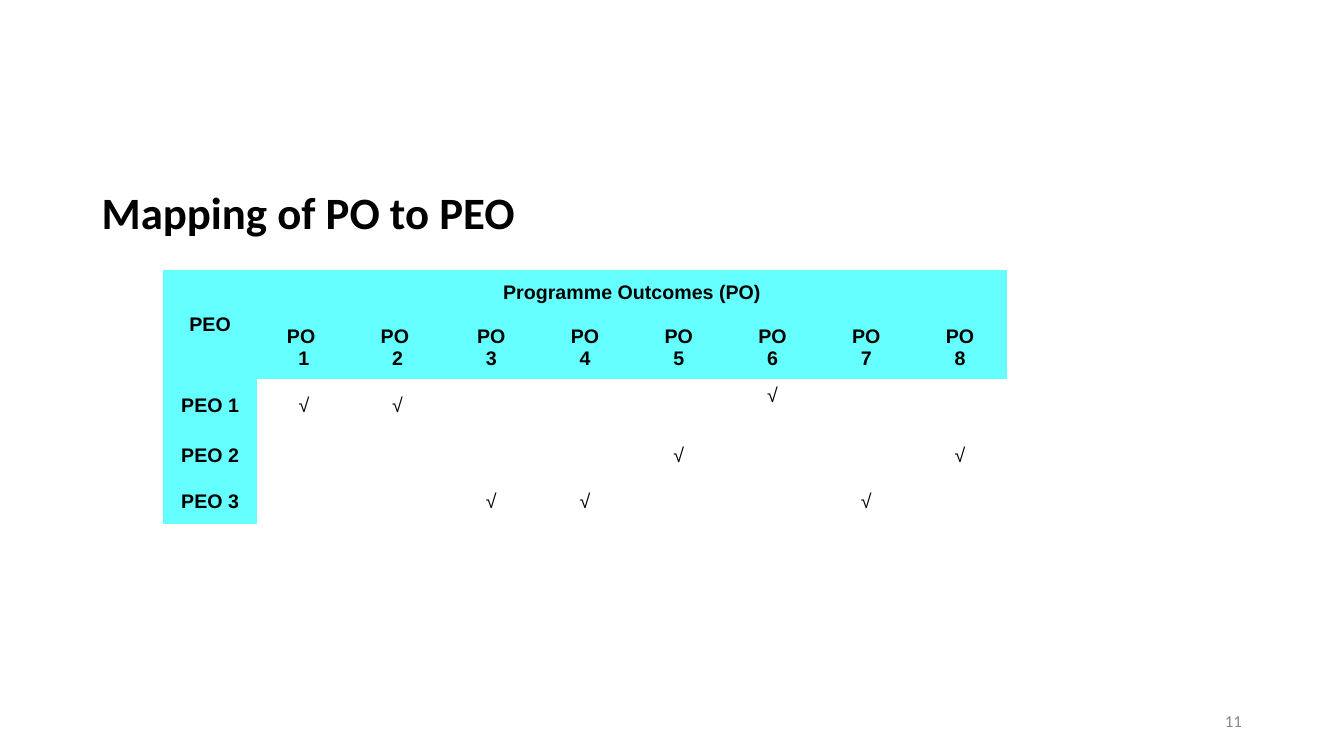
from dataclasses import dataclass

from pptx import Presentation
from pptx.dml.color import RGBColor
from pptx.enum.text import MSO_ANCHOR, PP_ALIGN
from pptx.oxml.ns import qn
from pptx.slide import Slide
from pptx.table import Table
from pptx.text.text import TextFrame
from pptx.util import Pt

COLORS = {"text": "000000", "header": "66FFFF", "number": "888888"}
NO_STYLE_NO_GRID = "{2D5ABB26-0587-4C30-8999-92F81FD0307C}"
CHECK = "√"
OUTCOME_COUNT = 8
COLUMN_WIDTH = 66.96
ROW_HEIGHTS = (32.4, 45.6, 37.2, 34.4, 32)
TABLE_LEFT, TABLE_TOP = 116.64, 192.96


@dataclass
class Objective:
    name: str
    outcomes: tuple[int, ...]


@dataclass
class Label:
    text: str
    left: float
    top: float
    width: float
    height: float
    size: float
    color: str
    bold: bool
    align: PP_ALIGN
    line_spacing: float


OBJECTIVES = (
    Objective("PEO 1", (1, 2, 6)),
    Objective("PEO 2", (5, 8)),
    Objective("PEO 3", (3, 4, 7)),
)
LABELS = (
    Label("Mapping of PO to PEO", 65.52, 128.88, 828, 49.68, 32, "text", True, PP_ALIGN.LEFT, 0.9),
    Label("11", 678.24, 500.4, 216, 28.8, 12, "number", False, PP_ALIGN.RIGHT, 1.0),
)


def write_text(frame: TextFrame, text: str, *, size: float = 14, font: str = "Arial",
               color: str = "text", bold: bool = False, align: PP_ALIGN = PP_ALIGN.CENTER,
               line_spacing: float = 1.0) -> None:
    frame.text = text
    for paragraph in frame.paragraphs:
        paragraph.alignment = align
        paragraph.line_spacing = line_spacing
        for run in paragraph.runs:
            run.font.size = Pt(size)
            run.font.name = font
            run.font.bold = bold
            run.font.color.rgb = RGBColor.from_string(COLORS[color])


def add_label(slide: Slide, label: Label) -> None:
    shape = slide.shapes.add_textbox(
        Pt(label.left), Pt(label.top), Pt(label.width), Pt(label.height))
    shape.text_frame.word_wrap = True
    shape.text_frame.vertical_anchor = MSO_ANCHOR.MIDDLE
    write_text(shape.text_frame, label.text, size=label.size, font="Calibri", color=label.color,
               bold=label.bold, align=label.align, line_spacing=label.line_spacing)


def add_mapping_table(slide: Slide) -> Table:
    column_count = OUTCOME_COUNT + 1
    shape = slide.shapes.add_table(
        len(ROW_HEIGHTS), column_count, Pt(TABLE_LEFT), Pt(TABLE_TOP),
        Pt(COLUMN_WIDTH * column_count), Pt(sum(ROW_HEIGHTS)))
    table = shape.table
    table.first_row = table.horz_banding = False
    next(shape.element.iter(qn("a:tableStyleId"))).text = NO_STYLE_NO_GRID
    for column in table.columns:
        column.width = Pt(COLUMN_WIDTH)
    for row_index, height in enumerate(ROW_HEIGHTS):
        table.rows[row_index].height = Pt(height)
        for column_index in range(column_count):
            cell = table.cell(row_index, column_index)
            cell.vertical_anchor = MSO_ANCHOR.MIDDLE
            if row_index < 2 or column_index == 0:
                cell.fill.solid()
                cell.fill.fore_color.rgb = RGBColor.from_string(COLORS["header"])
            else:
                cell.fill.background()
    return table


def fill_mapping_table(table: Table) -> None:
    # Header rows
    table.cell(0, 0).merge(table.cell(1, 0))
    table.cell(0, 1).merge(table.cell(0, OUTCOME_COUNT))
    write_text(table.cell(0, 0).text_frame, "PEO", bold=True)
    write_text(table.cell(0, 1).text_frame, "Programme Outcomes (PO)", bold=True)
    for outcome in range(1, OUTCOME_COUNT + 1):
        prefix = "PO " if outcome <= 2 else "PO"
        write_text(table.cell(1, outcome).text_frame, f"{prefix}\n{outcome}", bold=True)

    # Objectives and their check marks
    for row_index, objective in enumerate(OBJECTIVES, start=2):
        write_text(table.cell(row_index, 0).text_frame, objective.name, bold=True)
        for outcome in objective.outcomes:
            write_text(table.cell(row_index, outcome).text_frame, CHECK)

    # The check for PEO 1 and PO 6 sits at the top of its cell
    table.cell(2, 6).vertical_anchor = MSO_ANCHOR.TOP


def main() -> None:
    presentation = Presentation()
    presentation.slide_width = Pt(960)
    presentation.slide_height = Pt(540)
    slide = presentation.slides.add_slide(presentation.slide_layouts[6])

    # Title and slide number
    for label in LABELS:
        add_label(slide, label)

    # Mapping table
    fill_mapping_table(add_mapping_table(slide))
    presentation.save("out.pptx")


if __name__ == "__main__":
    main()
